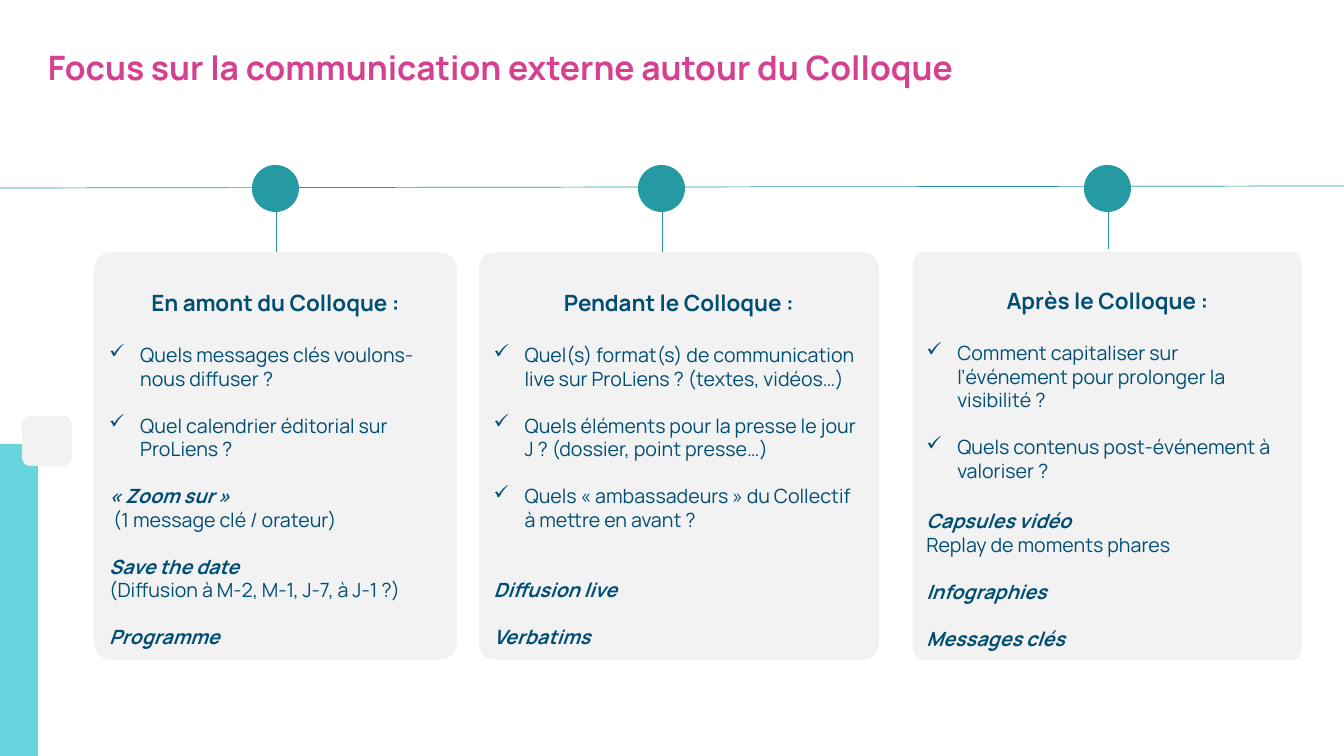
from lxml import etree
from pptx import Presentation
from pptx.dml.color import RGBColor
from pptx.enum.shapes import MSO_CONNECTOR as CONNECTOR, MSO_SHAPE as SHAPE
from pptx.enum.text import MSO_ANCHOR as ANCHOR, PP_ALIGN as ALIGN
from pptx.oxml.ns import qn
from pptx.util import Pt

PX = 914400 / 100.8
TEAL, AQUA, GREY, NAVY, PINK = "259AA2", "67D5DC", "F2F2F2", "004E73", "D54190"
LINE_14, LINE_16 = 16.8, 19.2  # height of one text line, in points

prs = Presentation()
prs.slide_width, prs.slide_height = round(1344 * PX), round(756 * PX)
slide = prs.slides.add_slide(prs.slide_layouts[6])
shapes = slide.shapes


def px(*lengths):
    return [round(length * PX) for length in lengths]


def color(hex_string):
    return RGBColor.from_string(hex_string)


def add_block(kind, left, top, width, height, fill, adjust=None):
    block = shapes.add_shape(kind, *px(left, top, width, height))
    block.shadow.inherit = False
    block.fill.solid()
    block.fill.fore_color.rgb = color(fill)
    block.line.fill.background()
    if adjust is not None:
        block.adjustments[0] = adjust
    return block


def add_rule(x1, y1, x2, y2):
    rule = shapes.add_connector(CONNECTOR.STRAIGHT, *px(x1, y1, x2, y2))
    rule.line.color.rgb = color(TEAL)
    rule.line.width = Pt(0.5)
    etree.SubElement(rule._element.spPr, qn("a:effectLst"))


def write(frame, text, size=14, hue=NAVY, bold=False, italic=False,
          align=ALIGN.LEFT, before=0, check=False):
    """Fill the empty first paragraph of the frame, or append a new one."""
    first = frame.paragraphs[0]
    paragraph = frame.add_paragraph() if first.runs else first
    paragraph.alignment = align
    paragraph.space_before = Pt(before)
    if check:
        properties = paragraph._p.get_or_add_pPr()
        indent = px(31)[0]
        properties.set("marL", str(indent))
        properties.set("indent", str(-indent))
        etree.SubElement(properties, qn("a:buChar")).set("char", "✓")
    run = paragraph.add_run()
    run.text = text
    font = run.font
    font.name, font.size, font.bold, font.italic = "Manrope", Pt(size), bold, italic
    font.color.rgb = color(hue)


STYLES = {
    "first": dict(check=True, before=LINE_16),
    "question": dict(check=True, before=LINE_14),
    "action": dict(bold=True, italic=True, before=LINE_14),
    "detail": dict(),
    "action after 16 pt": dict(bold=True, italic=True, before=LINE_16),
    "action after two": dict(bold=True, italic=True, before=2 * LINE_14),
}

# heading, card left, width, height, corner, centre of the node, top of the stem, lines
PHASES = [
    ("En amont du Colloque :", 94, 363, 408, 0.05, 276, 207, [
        ("first", "Quels messages clés voulons-nous diffuser ?"),
        ("question", "Quel calendrier éditorial sur ProLiens ?"),
        ("action", "« Zoom sur »"),
        ("detail", " (1 message clé / orateur)"),
        ("action", "Save the date"),
        ("detail", "(Diffusion à M-2, M-1, J-7, à J-1 ?)"),
        ("action", "Programme"),
    ]),
    ("Pendant le Colloque :", 479, 400, 408, 0.04, 662, 207, [
        ("first", "Quel(s) format(s) de communication live sur ProLiens ? (textes, vidéos…)"),
        ("question", "Quels éléments pour la presse le jour J ? (dossier, point presse…)"),
        ("question", "Quels « ambassadeurs » du Collectif à mettre en avant ?"),
        ("action after two", "Diffusion live"),
        ("action", "Verbatims"),
    ]),
    ("Après le Colloque :", 913, 389, 408, 0.03, 1108, 204, [
        ("first", "Comment capitaliser sur l’événement pour prolonger la visibilité ?"),
        ("question", "Quels contenus post-événement à valoriser ?"),
        ("action after 16 pt", "Capsules vidéo"),
        ("detail", "Replay de moments phares"),
        ("action", "Infographies"),
        ("action", "Messages clés"),
    ]),
]

add_rule(0, 188, 1344, 186)
add_block(SHAPE.ROUND_1_RECTANGLE, 0, 444, 38, 312, AQUA, 0.37)
add_block(SHAPE.ROUNDED_RECTANGLE, 22, 416, 50, 50, GREY)

title = shapes.add_textbox(*px(38, 42, 1016, 50)).text_frame
title.word_wrap = True
write(title, "Focus sur la communication externe autour du Colloque",
      size=24, hue=PINK, bold=True)

for heading, left, width, height, corner, centre, stem_top, lines in PHASES:
    card = add_block(SHAPE.ROUNDED_RECTANGLE, left, 252, width, height, GREY, corner)
    frame = card.text_frame
    frame.word_wrap = True
    frame.vertical_anchor = ANCHOR.MIDDLE
    frame.margin_top = px(31)[0]
    write(frame, heading, size=16, bold=True, align=ALIGN.CENTER)
    for style, text in lines:
        write(frame, text, **STYLES[style])

    add_block(SHAPE.OVAL, centre - 24, 165, 47, 47, TEAL)
    add_rule(centre, stem_top, centre, stem_top + 45)

prs.save("out.pptx")
